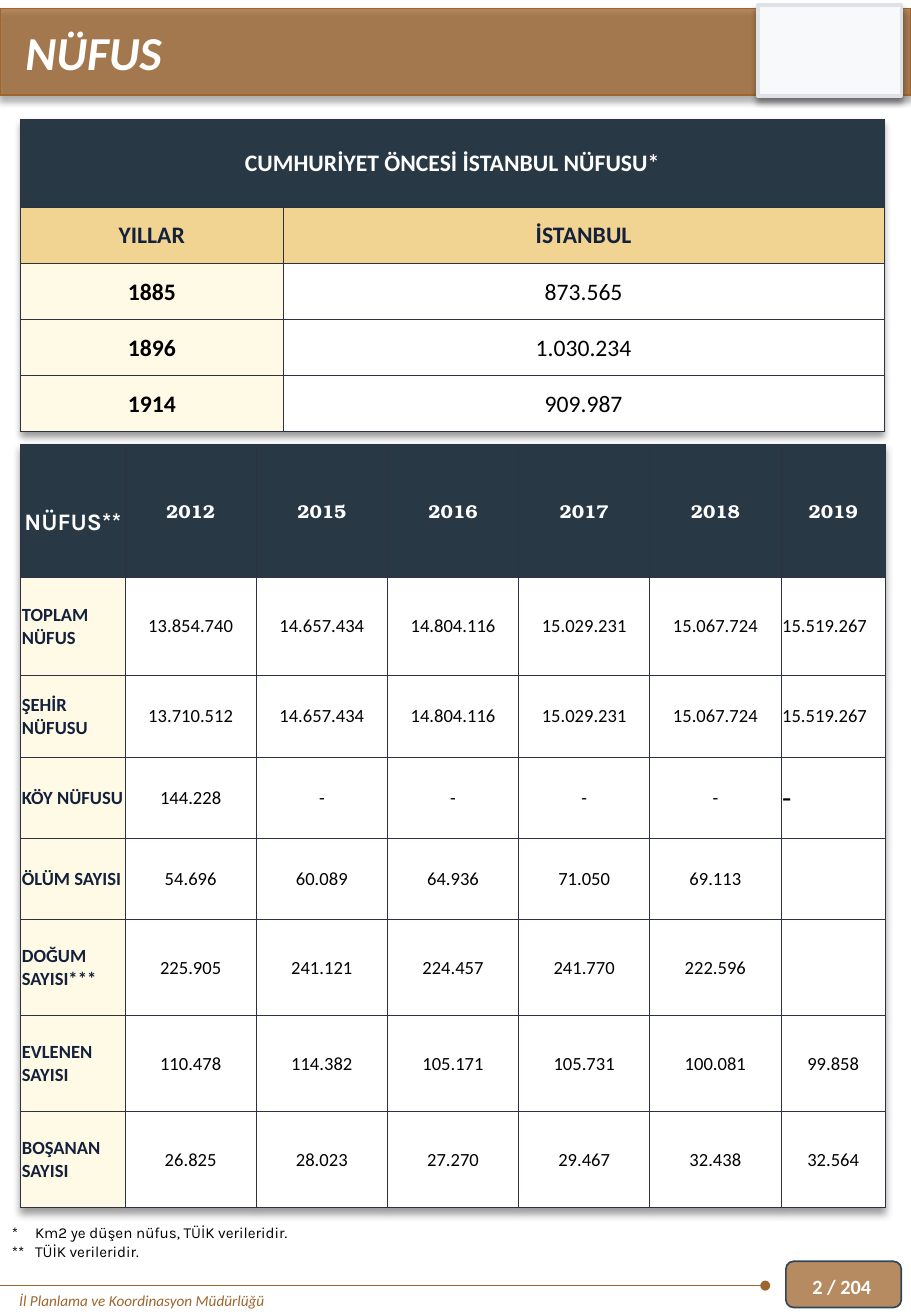
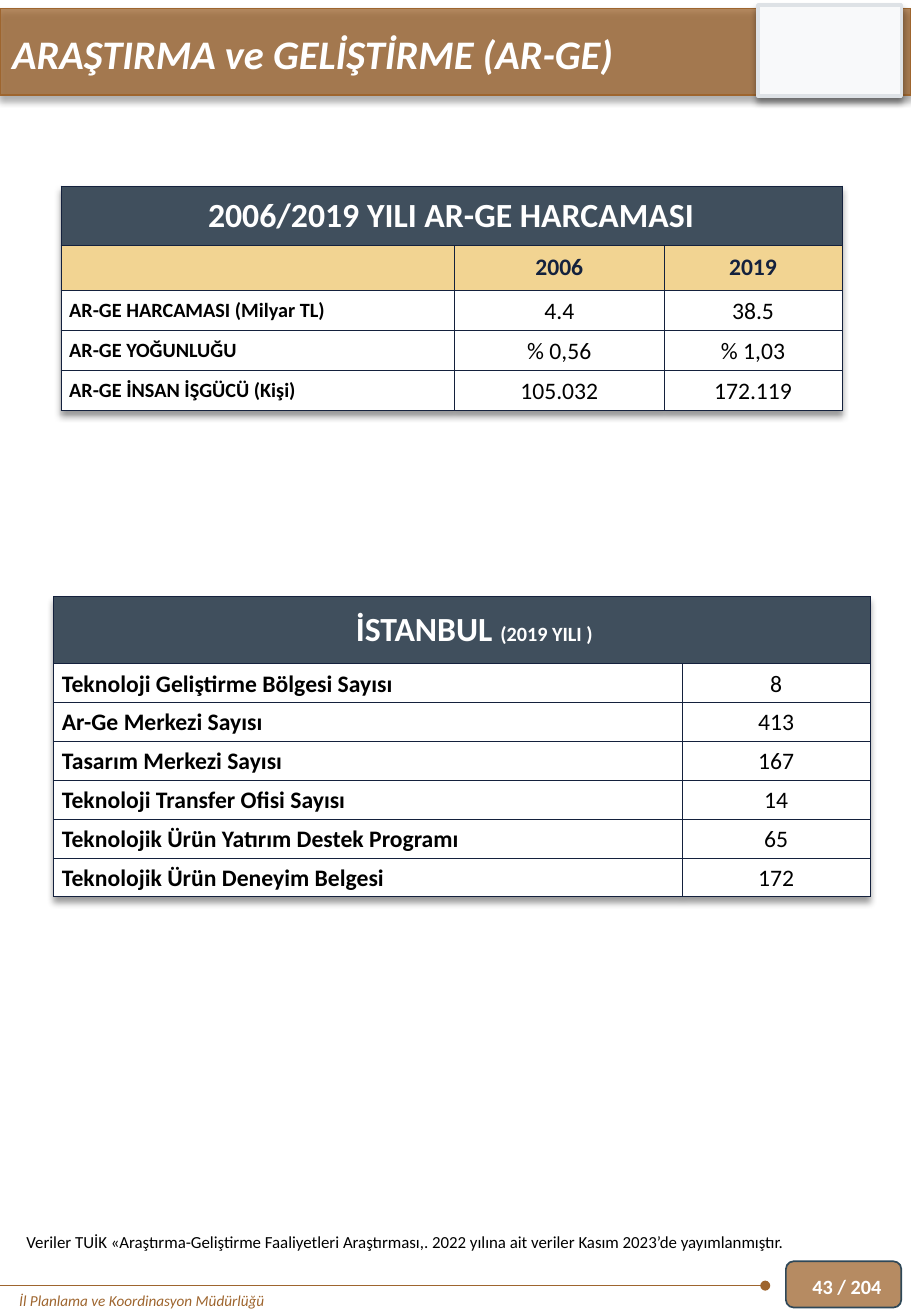
import dataclasses

import lxml.etree
import pptx
import pptx.dml.color
import pptx.enum.shapes
import pptx.enum.text
import pptx.oxml.ns
import pptx.util

Inches, Pt = pptx.util.Inches, pptx.util.Pt
RGB = pptx.dml.color.RGBColor
ALIGN = pptx.enum.text.PP_ALIGN
MIDDLE = pptx.enum.text.MSO_ANCHOR.MIDDLE
SHAPE = pptx.enum.shapes.MSO_SHAPE
qn = pptx.oxml.ns.qn

BROWN = RGB(0x9E, 0x65, 0x2E)
SLATE = RGB(0x2F, 0x48, 0x58)
PALE = RGB(0xF8, 0xF9, 0xFA)
PALE_EDGE = RGB(0xDE, 0xE2, 0xE6)
DARK = RGB(0x28, 0x38, 0x45)
STEEL = RGB(0x40, 0x4F, 0x5D)
SAND = RGB(0xF2, 0xD4, 0x92)
CREAM = RGB(0xFF, 0xFA, 0xE5)
NAVY = RGB(0x14, 0x21, 0x3D)
GRID = RGB(0x2D, 0x31, 0x42)
WHITE = RGB(0xFF, 0xFF, 0xFF)
BLACK = RGB(0, 0, 0)


@dataclasses.dataclass(frozen=True)
class Style:
    size: float = 14
    color: RGB = BLACK
    fill: RGB = WHITE
    bold: bool = False
    align: ALIGN = ALIGN.CENTER
    font: str = "Calibri"
    spacing: float = 1.0
    left: float = 0.01
    top: float = 0.0

    def but(self, **changes):
        return dataclasses.replace(self, **changes)


BANNER = Style(color=WHITE, fill=DARK, bold=True)
COLUMN_HEAD = Style(color=NAVY, fill=SAND, bold=True)
FIGURE = Style(spacing=1.07)
YEAR = FIGURE.but(fill=CREAM, bold=True)
YEAR_HEAD = BANNER.but(size=11, font="TeX Gyre Bonum")
CORNER = BANNER.but(font="Karla", top=0.2)
COUNT = Style(size=11)
COUNT_LEFT = COUNT.but(align=ALIGN.LEFT)
COUNT_LABEL = COUNT_LEFT.but(color=NAVY, fill=CREAM, bold=True)
BIG_BANNER = BANNER.but(size=20, fill=STEEL)
LABEL = Style(bold=True, align=ALIGN.LEFT, left=0.07)
SMALL_LABEL = LABEL.but(size=12)
CENTER_LABEL = LABEL.but(spacing=1.07)

# Each table row: height, style of the first cell, style of the others, cells.
# A cell is a text or (text, style); a lone cell spans the whole row.
OLD_POPULATION = [
    (0.73, BANNER, None, ["CUMHURİYET ÖNCESİ İSTANBUL NÜFUSU*"]),
    (0.46, COLUMN_HEAD, COLUMN_HEAD, ["YILLAR", "İSTANBUL"]),
    (0.46, YEAR, FIGURE, ["1885", "873.565"]),
    (0.46, YEAR, FIGURE, ["1896", "1.030.234"]),
    (0.46, YEAR, FIGURE, ["1914", "909.987"]),
]
POPULATION = [
    (1.09, CORNER, YEAR_HEAD,
     ["NÜFUS**", "2012", "2015", "2016", "2017", "2018", "2019"]),
    (0.81, COUNT_LABEL, COUNT,
     ["TOPLAM NÜFUS", "13.854.740", "14.657.434", "14.804.116", "15.029.231",
      "15.067.724", ("15.519.267", COUNT_LEFT)]),
    (0.67, COUNT_LABEL, COUNT,
     ["ŞEHİR NÜFUSU", "13.710.512", "14.657.434", "14.804.116", "15.029.231",
      "15.067.724", ("15.519.267", COUNT_LEFT)]),
    (0.67, COUNT_LABEL, COUNT,
     ["KÖY NÜFUSU", "144.228", "-", "-", "-", "-",
      ("-", COUNT_LEFT.but(size=18))]),
    (0.67, COUNT_LABEL, COUNT,
     ["ÖLÜM SAYISI", "54.696", "60.089", "64.936", "71.050", "69.113", ""]),
    (0.79, COUNT_LABEL, COUNT,
     ["DOĞUM SAYISI***", "225.905", "241.121", "224.457", "241.770",
      "222.596", ""]),
    (0.79, COUNT_LABEL, COUNT,
     ["EVLENEN SAYISI", "110.478", "114.382", "105.171", "105.731", "100.081",
      "99.858"]),
    (0.79, COUNT_LABEL, COUNT,
     ["BOŞANAN SAYISI", "26.825", "28.023", "27.270", "29.467", "32.438",
      "32.564"]),
]
SPENDING = [
    (0.49, BIG_BANNER, None, ["2006/2019 YILI AR-GE HARCAMASI"]),
    (0.37, COLUMN_HEAD, COLUMN_HEAD, ["", "2006", "2019"]),
    (0.33, SMALL_LABEL, FIGURE, ["AR-GE HARCAMASI (Milyar TL)", "4.4", "38.5"]),
    (0.33, SMALL_LABEL, FIGURE, ["AR-GE YOĞUNLUĞU", "% 0,56", "% 1,03"]),
    (0.33, SMALL_LABEL, FIGURE,
     ["AR-GE İNSAN İŞGÜCÜ (Kişi)", "105.032", "172.119"]),
]
CENTERS = [(0.55, BIG_BANNER.but(left=0.28), None, ["İSTANBUL "])] + [
    (0.32, CENTER_LABEL, FIGURE, row) for row in [
        ("Teknoloji Geliştirme Bölgesi Sayısı", "8"),
        ("Ar-Ge Merkezi Sayısı", "413"),
        ("Tasarım Merkezi Sayısı", "167"),
        ("Teknoloji Transfer Ofisi Sayısı", "14"),
        ("Teknolojik Ürün Yatırım Destek Programı", "65"),
        ("Teknolojik Ürün Deneyim Belgesi", "172"),
    ]
]
POPULATION_NOTES = ["*\tKm2 ye düşen nüfus, TÜİK verileridir.",
                    "**\tTÜİK verileridir."]
RESEARCH_NOTES = ["Veriler TUİK «Araştırma-Geliştirme Faaliyetleri Araştırması,. "
                  "2022 yılına ait veriler Kasım 2023’de yayımlanmıştır."]


def add_xml(parent, tag, **attributes):
    return lxml.etree.SubElement(
        parent, qn(tag), {key: str(value) for key, value in attributes.items()})


def add_effects(properties, shadowed):
    """Append an effect list, empty or with the soft shadow used everywhere."""
    effects = add_xml(properties, "a:effectLst")
    if shadowed:
        shadow = add_xml(effects, "a:outerShdw", blurRad=Pt(4), dist=Pt(3),
                         dir=5400000, algn="t", rotWithShape=0)
        add_xml(add_xml(shadow, "a:srgbClr", val=BLACK), "a:alpha", val=40000)
    return effects


def set_font(font, size, color, bold=False, italic=False, name="Calibri"):
    font.name, font.size, font.bold, font.italic = name, Pt(size), bold, italic
    font.color.rgb = color


def add_panel(page, kind, at, fill, edge, width, opacity=100, shadowed=False):
    panel = page.shapes.add_shape(kind, *map(Inches, at))
    panel.fill.solid()
    panel.fill.fore_color.rgb = fill
    if opacity < 100:
        color = panel.element.spPr.find(".//" + qn("a:srgbClr"))
        add_xml(color, "a:alpha", val=opacity * 1000)
    panel.line.color.rgb = edge
    panel.line.width = Pt(width)
    add_effects(panel.element.spPr, shadowed)
    return panel


def add_text(page, at, lines, size, color, bold=False, italic=False,
             name="Calibri", hang=0):
    box = page.shapes.add_textbox(*map(Inches, at))
    frame = box.text_frame
    frame.word_wrap = True
    frame.text = "\n".join(lines)
    for para in frame.paragraphs:
        if hang:
            properties = para._p.get_or_add_pPr()
            properties.set("marL", str(Inches(hang)))
            properties.set("indent", str(-Inches(hang)))
        set_font(para.font, size, color, bold, italic, name)
    return box


def fill_layout(layout, page):
    """Draw the band, badge and footer on a page and move them to its layout."""
    for holder in list(layout.placeholders):
        if holder.placeholder_format.type != pptx.enum.shapes.PP_PLACEHOLDER.TITLE:
            holder.element.getparent().remove(holder.element)
    badge = add_panel(page, SHAPE.ROUNDED_RECTANGLE, (6.47, 10.38, 0.95, 0.38),
                      BROWN, SLATE, 1, opacity=75)
    band = add_panel(page, SHAPE.RECTANGLE, (0, 0.07, 7.5, 0.71),
                     BROWN, BROWN, 1, opacity=75, shadowed=True)
    emblem = add_panel(page, SHAPE.RECTANGLE, (6.24, 0.04, 1.18, 0.75),
                       PALE, PALE_EDGE, 2, shadowed=True)
    rule = page.shapes.add_connector(
        pptx.enum.shapes.MSO_CONNECTOR.STRAIGHT,
        Inches(6.3), Inches(10.58), Inches(0), Inches(10.58))
    rule.line.color.rgb = BROWN
    rule.line.width = Pt(0.5)
    add_xml(rule.line._get_or_add_ln(), "a:headEnd", type="oval")
    add_effects(rule.element.spPr, False)
    office = add_text(page, (0.06, 10.58, 4.69, 0.25),
                      ["İl Planlama ve Koordinasyon Müdürlüğü"], 9, BROWN,
                      italic=True)
    for shape in (badge, band, emblem, rule, office):
        layout.shapes.element.append(shape.element)


def set_title(page, text, at, size):
    title = page.shapes.title
    title.left, title.top, title.width, title.height = map(Inches, at)
    frame = title.text_frame
    frame.text = text
    frame.auto_size = pptx.enum.text.MSO_AUTO_SIZE.NONE
    frame.vertical_anchor = MIDDLE
    para = frame.paragraphs[0]
    para.alignment = ALIGN.LEFT
    set_font(para.font, size, WHITE, bold=True, italic=True)


def add_page_number(page, number):
    box = add_text(page, (6.59, 10.38, 0.9, 0.42), [f"{number} / 204"], 12,
                   WHITE, bold=True)
    box.text_frame.vertical_anchor = MIDDLE


def fill_cell(cell, text, style, edge, edge_width):
    cell.fill.solid()
    cell.fill.fore_color.rgb = style.fill
    cell.vertical_anchor = MIDDLE
    cell.margin_left = Inches(style.left)
    cell.margin_right = Inches(min(style.left, 0.07))
    cell.margin_top, cell.margin_bottom = Inches(style.top), 0
    properties = cell._tc.get_or_add_tcPr()
    for position, side in enumerate("LRTB"):
        border = add_xml(properties, f"a:ln{side}", w=Pt(edge_width))
        add_xml(add_xml(border, "a:solidFill"), "a:srgbClr", val=edge)
        properties.insert(position, border)
    para = cell.text_frame.paragraphs[0]
    para.text = text
    para.alignment = style.align
    para.line_spacing = style.spacing
    set_font(para.font, style.size, style.color, style.bold, name=style.font)


def add_table(page, left, top, widths, rows, edge, edge_width):
    heights = [row[0] for row in rows]
    table = page.shapes.add_table(
        len(rows), len(widths), Inches(left), Inches(top),
        Inches(sum(widths)), Inches(sum(heights))).table
    properties = table._tbl.tblPr
    properties.insert(0, add_effects(properties, True))
    for column, width in zip(table.columns, widths):
        column.width = Inches(width)
    for index, (height, first, others, cells) in enumerate(rows):
        table.rows[index].height = Inches(height)
        spans = len(cells) == 1
        for place in range(len(widths)):
            content = "" if spans and place else cells[place]
            style = others if place and not spans else first
            if isinstance(content, tuple):
                content, style = content
            fill_cell(table.cell(index, place), content, style, edge, edge_width)
        if spans:
            table.cell(index, 0).merge(table.cell(index, len(widths) - 1))
    return table


def main():
    deck = pptx.Presentation()
    deck.slide_width, deck.slide_height = Inches(7.5), Inches(10.83)
    layout = deck.slide_layouts[5]

    population = deck.slides.add_slide(layout)
    fill_layout(layout, population)
    set_title(population, "NÜFUS", (0.11, 0.14, 6.1, 0.57), 28)
    add_table(population, 0.17, 3.66, [0.86] + [1.08] * 5 + [0.86],
              POPULATION, GRID, 0.5)
    add_table(population, 0.17, 0.98, [2.16, 4.95], OLD_POPULATION, GRID, 0.5)
    add_text(population, (0, 10.02, 7.3, 0.4), POPULATION_NOTES, 9, BLACK,
             name="Karla", hang=0.19)
    add_page_number(population, 2)

    research = deck.slides.add_slide(layout)
    set_title(research, "ARAŞTIRMA ve GELİŞTİRME (AR-GE)", (0, 0.19, 6.2, 0.5), 24)
    add_table(research, 0.5, 1.53, [3.24, 1.73, 1.46], SPENDING, NAVY, 0.25)
    centers = add_table(research, 0.44, 4.91, [5.18, 1.54], CENTERS, NAVY, 0.25)
    span = centers.cell(0, 0).text_frame.paragraphs[0].add_run()
    span.text = "(2019 YILI )"
    span.font.size = Pt(12)
    add_text(research, (0.12, 10.09, 7.3, 0.27), RESEARCH_NOTES, 10, BLACK)
    add_page_number(research, 43)

    deck.save("out.pptx")


if __name__ == "__main__":
    main()
